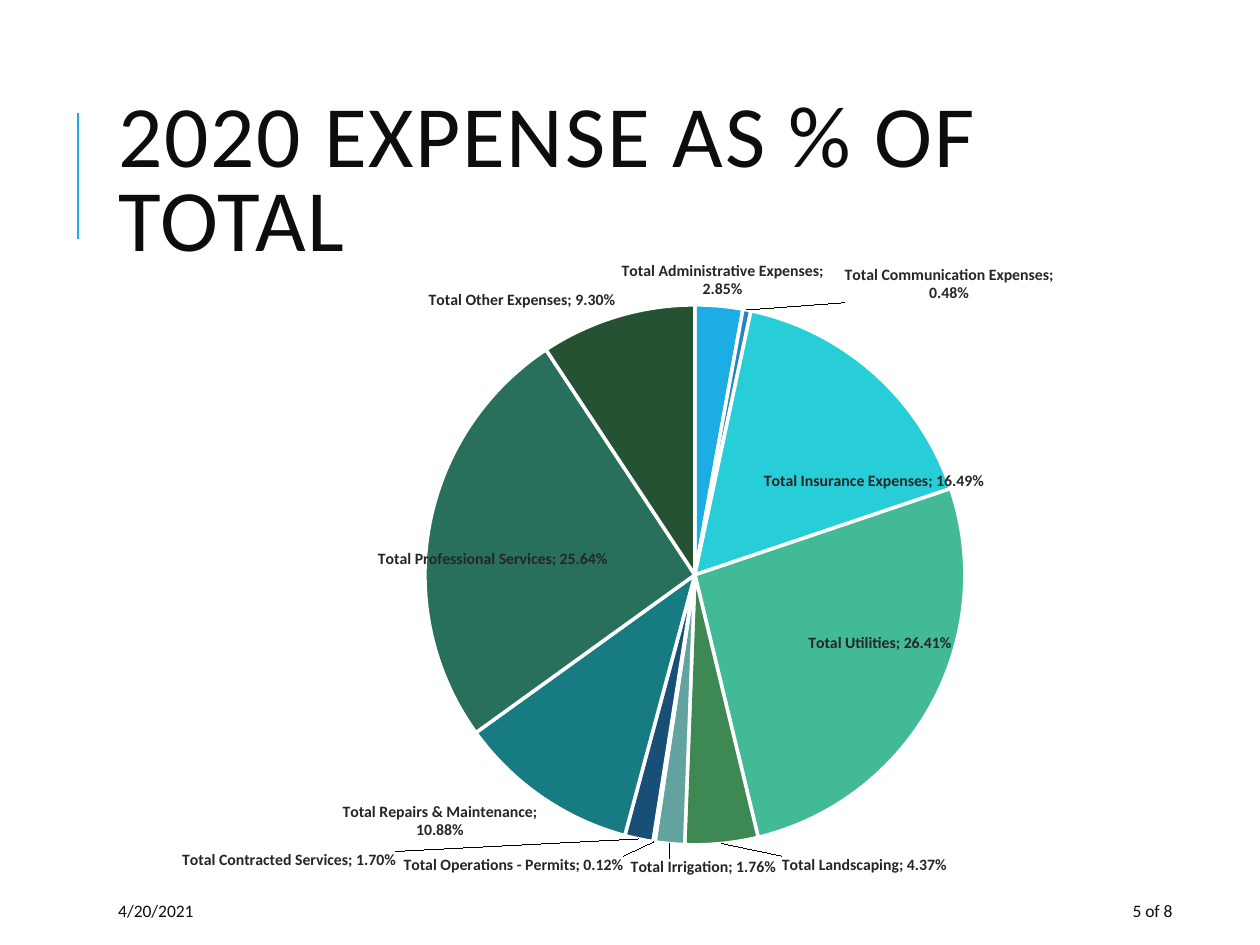
from copy import deepcopy

from lxml import etree
from pptx import Presentation
from pptx import util as u
from pptx.chart.data import CategoryChartData
from pptx.dml.color import RGBColor
from pptx.enum import chart as charts, shapes, text
from pptx.oxml import ns

FONT = "Calibri"
INK = RGBColor(0x0D, 0x0D, 0x0D)
LABEL = RGBColor(0x26, 0x26, 0x26)
BLACK = RGBColor(0, 0, 0)
WHITE = RGBColor(0xFF, 0xFF, 0xFF)
ACCENT = RGBColor(0x1C, 0xAD, 0xE4)

CHART_BOX = (27.36, 138.24, 678.24, 368.64)
PIE_BOX = (215.5, 36, 308.6, 308.6)

EXPENSES = [
    ("Total Administrative Expenses", 0.0285, ACCENT, (-56, 0)),
    ("Total Communication Expenses", 0.0048, RGBColor(0x26, 0x83, 0xC6), (55, 0)),
    ("Total Insurance Expenses", 0.1649, RGBColor(0x27, 0xCE, 0xD7), (-66, 70)),
    ("Total Utilities", 0.2641, RGBColor(0x42, 0xBA, 0x97), (-74, -43)),
    ("Total Landscaping", 0.0437, RGBColor(0x3E, 0x88, 0x53), (34, 3)),
    ("Total Irrigation", 0.0176, RGBColor(0x62, 0xA3, 0x9F), (61, 4)),
    ("Total Operations - Permits", 0.0012, RGBColor(0x10, 0x68, 0x89), (-17, 4)),
    ("Total Contracted Services", 0.017, RGBColor(0x17, 0x4F, 0x77), (-138, 3)),
    ("Total Repairs & Maintenance", 0.1088, RGBColor(0x17, 0x7C, 0x81), None),
    ("Total Professional Services", 0.2564, RGBColor(0x28, 0x70, 0x5B), (106, 25)),
    ("Total Other Expenses", 0.093, RGBColor(0x25, 0x52, 0x32), None),
]


def add_child(parent, tag, **attributes):
    return etree.SubElement(parent, ns.qn(tag), attributes)


def manual_layout(**values):
    layout = etree.Element(ns.qn("c:layout"))
    manual = add_child(layout, "c:manualLayout")
    for name, value in values.items():
        add_child(manual, f"c:{name}", val=str(value))
    return layout


class SlideBuilder:
    def __init__(self, slide):
        self.slide = slide

    def style(self, font, size, color, bold=False):
        font.name = FONT
        font.size = u.Pt(size)
        font.color.rgb = color
        font.bold = bold

    def fill_text(self, shape, content, size):
        frame = shape.text_frame
        frame.text = content
        frame.word_wrap = True
        frame.auto_size = text.MSO_AUTO_SIZE.NONE
        frame.vertical_anchor = text.MSO_ANCHOR.MIDDLE
        paragraph = frame.paragraphs[0]
        paragraph.alignment = text.PP_ALIGN.LEFT
        self.style(paragraph.runs[0].font, size, INK)
        return paragraph

    def title(self, content, box, size):
        shape = self.slide.shapes.title
        shape.left, shape.top, shape.width, shape.height = map(u.Pt, box)
        paragraph = self.fill_text(shape, content, size)
        paragraph.line_spacing = 0.8
        paragraph.runs[0].font._element.set("spc", "100")

    def text_box(self, content, box, size):
        self.fill_text(self.slide.shapes.add_textbox(*map(u.Pt, box)), content, size)

    def line(self, points, color, width):
        connector = self.slide.shapes.add_connector(
            shapes.MSO_CONNECTOR.STRAIGHT, *map(u.Pt, points))
        connector.line.color.rgb = color
        connector.line.width = u.Pt(width)
        add_child(connector._element.spPr, "a:effectLst")

    def pie(self, expenses, box, plot_box):
        data = CategoryChartData(number_format="0.00%")
        data.categories = [name for name, *_ in expenses]
        data.add_series("Series 1", [share for _, share, *_ in expenses])
        chart = self.slide.shapes.add_chart(
            charts.XL_CHART_TYPE.PIE, *map(u.Pt, box), data).chart
        chart.has_title = False
        chart.has_legend = False
        self.style(chart.font, 10, BLACK)
        plot = chart.plots[0]
        plot.vary_by_categories = True
        series = plot.series[0]
        for index, (_, _, color, _) in enumerate(expenses):
            slice_format = series.points[index].format
            slice_format.fill.solid()
            slice_format.fill.fore_color.rgb = color
            slice_format.line.color.rgb = WHITE
            slice_format.line.width = u.Pt(2)
        self.place_plot(plot, box, plot_box)
        self.label_slices(series, expenses, box)

    def place_plot(self, plot, box, plot_box):
        area = plot._element.getparent()
        for layout in area.findall(ns.qn("c:layout")):
            area.remove(layout)
        left, top, width, height = plot_box
        area.insert(0, manual_layout(
            layoutTarget="inner", xMode="edge", yMode="edge",
            x=round(left / box[2], 4), y=round(top / box[3], 4),
            w=round(width / box[2], 4), h=round(height / box[3], 4)))

    def label_slices(self, series, expenses, box):
        labels = series.data_labels
        labels.show_value = True
        labels.show_category_name = True
        labels.show_percentage = False
        labels.number_format = "0.00%"
        labels.number_format_is_linked = False
        labels.position = charts.XL_LABEL_POSITION.OUTSIDE_END
        self.style(labels.font, 9, LABEL, bold=True)
        root = labels._element
        separator = etree.Element(ns.qn("c:separator"))
        separator.text = "; "
        leader = root.find(ns.qn("c:showLeaderLines"))
        if leader is None:
            leader = add_child(root, "c:showLeaderLines")
        leader.set("val", "1")
        leader.addprevious(separator)
        shared = [child for child in root if child is not leader]
        moved = [(i, row[3]) for i, row in enumerate(expenses) if row[3]]
        for position, (index, (shift_x, shift_y)) in enumerate(moved):
            label = etree.Element(ns.qn("c:dLbl"))
            add_child(label, "c:idx", val=str(index))
            label.append(manual_layout(
                x=round(shift_x / box[2], 4), y=round(shift_y / box[3], 4)))
            label.extend(deepcopy(shared))
            root.insert(position, label)


def main():
    presentation = Presentation()
    presentation.slide_width = u.Pt(720)
    presentation.slide_height = u.Pt(540)
    builder = SlideBuilder(presentation.slides.add_slide(presentation.slide_layouts[5]))
    builder.line((44.64, 136.8, 44.64, 64.8), ACCENT, 1.5)
    builder.title("2020 EXPENSE AS % OF TOTAL", (60.48, 46.08, 573.84, 118.08), 50)
    builder.pie(EXPENSES, CHART_BOX, PIE_BOX)
    builder.text_box("4/20/2021", (60.48, 509.76, 127.44, 21.6), 10)
    builder.text_box("5 of 8", (640.08, 509.76, 57.6, 21.6), 10)
    presentation.save("out.pptx")


if __name__ == "__main__":
    main()
